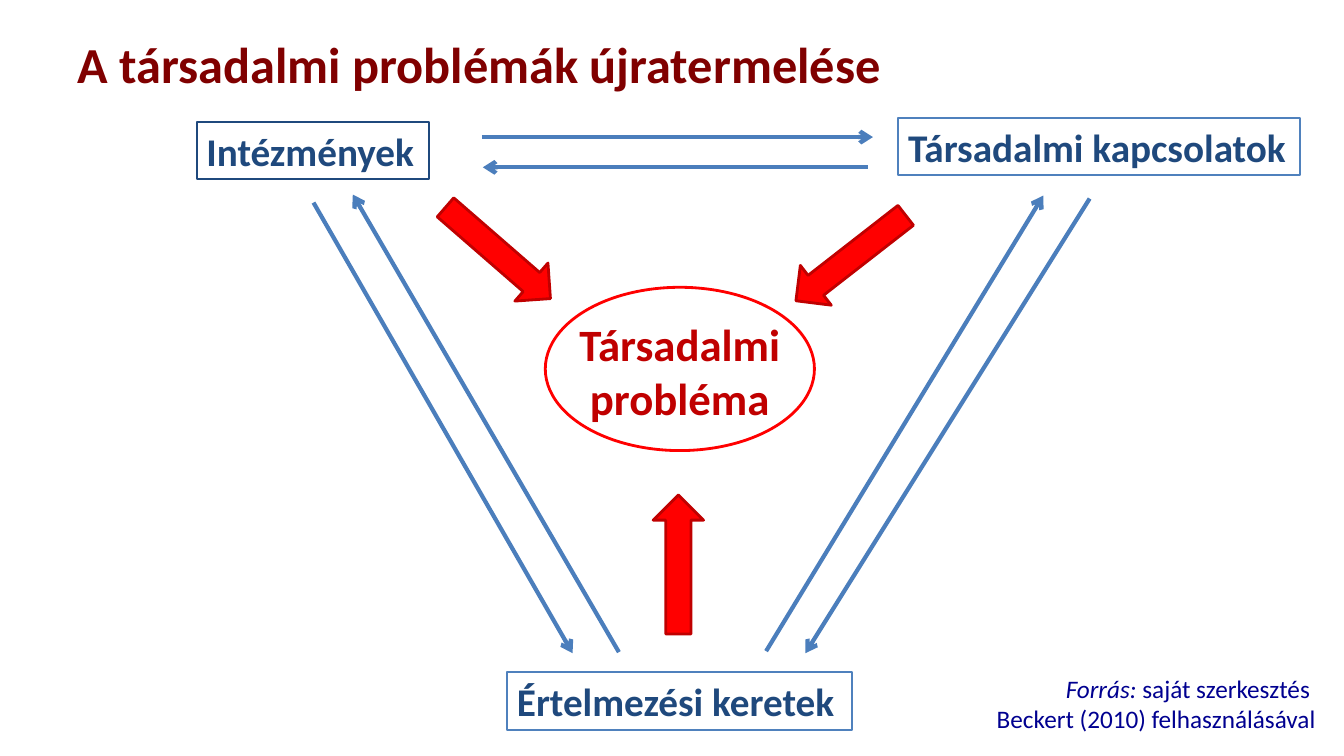
from lxml import etree
from pptx import Presentation
from pptx import util as u
from pptx.dml.color import RGBColor
from pptx.enum import shapes, text
from pptx.oxml.ns import qn

PX = 9144  # 100 px to the inch
FONT = "Calibri"
MAROON = RGBColor(0x80, 0x00, 0x00)
NAVY = RGBColor(0x1F, 0x49, 0x7D)
BLUE = RGBColor(0x4F, 0x81, 0xBD)
ARROW_BLUE = RGBColor(0x4B, 0x7E, 0xBC)
RED = RGBColor(0xFF, 0x00, 0x00)
DARK_RED = RGBColor(0xC0, 0x00, 0x00)
SOURCE_BLUE = RGBColor(0x00, 0x00, 0x90)

# Content: places are left, top, width, height
TITLE = ("A társadalmi problémák újratermelése", (67, 28, 1200, 70))
FACTORS = [
    ("Intézmények", (195, 121, 231, 57), NAVY),
    ("Társadalmi kapcsolatok", (891, 117, 399, 57), BLUE),
    ("Értelmezési keretek", (503, 667, 342, 57), BLUE),
]
PROBLEM = ("Társadalmi probléma", (541, 309, 267, 118))
PROBLEM_OVAL = (541, 285, 267, 162)
BLOCK_ARROW_SIZE = (138, 50)
BLOCK_ARROWS = [(425, 226, 41), (775, 231, 142.1), (604, 535, 270)]  # left, top, angle
LINKS = [  # start, end
    ((311, 201), (568, 648)),
    ((614, 647), (350, 193)),
    ((1081, 197), (799, 648)),
    ((760, 646), (1035, 194)),
    ((478, 136), (866, 136)),
    ((861, 166), (479, 166)),
]
SOURCE = ("Forrás: ", "saját szerkesztés ", "Beckert (2010) felhasználásával")
SOURCE_PLACE = (927, 663, 388, 71)


def px(*lengths):
    return [round(length * PX) for length in lengths]


def style(font, size, color, bold=False, italic=False):
    font.name, font.size, font.color.rgb = FONT, u.Pt(size), color
    font.bold, font.italic = bold, italic


def add_shape(kind, place, line, width, fill=None):
    shape = page.shapes.add_shape(kind, *px(*place))
    shape.shadow.inherit = False
    if fill is None:
        shape.fill.background()
    else:
        shape.fill.solid()
        shape.fill.fore_color.rgb = fill
    shape.line.color.rgb = line
    shape.line.width = u.Pt(width)
    return shape


def add_link(start, end):
    link = page.shapes.add_connector(shapes.MSO_CONNECTOR.STRAIGHT, *px(*start, *end))
    link.line.color.rgb = ARROW_BLUE
    link.line.width = u.Pt(3)
    etree.SubElement(link.line._get_or_add_ln(), qn("a:tailEnd"), type="arrow")
    etree.SubElement(link._element.spPr, qn("a:effectLst"))


deck = Presentation()
deck.slide_width, deck.slide_height = u.Inches(13.333), u.Inches(7.5)
page = deck.slides.add_slide(deck.slide_layouts[5])

# Title
title = page.shapes.title
title.left, title.top, title.width, title.height = px(*TITLE[1])
frame = title.text_frame
frame.text = TITLE[0]
frame.auto_size = text.MSO_AUTO_SIZE.NONE
frame.vertical_anchor = text.MSO_ANCHOR.MIDDLE
frame.paragraphs[0].alignment = text.PP_ALIGN.LEFT
style(frame.paragraphs[0].runs[0].font, 36, MAROON, bold=True)

# Framed factors
for label, place, line in FACTORS:
    box = add_shape(shapes.MSO_SHAPE.RECTANGLE, place, line, 1.5)
    frame = box.text_frame
    frame.text = label
    frame.word_wrap = False
    frame.vertical_anchor = text.MSO_ANCHOR.TOP
    frame.paragraphs[0].alignment = text.PP_ALIGN.LEFT
    style(frame.paragraphs[0].runs[0].font, 28, NAVY, bold=True)

# Central problem
box = page.shapes.add_textbox(*px(*PROBLEM[1]))
frame = box.text_frame
frame.text = PROBLEM[0]
frame.word_wrap = True
frame.paragraphs[0].alignment = text.PP_ALIGN.CENTER
style(frame.paragraphs[0].runs[0].font, 32, DARK_RED, bold=True)
add_shape(shapes.MSO_SHAPE.OVAL, PROBLEM_OVAL, RED, 2)

# Red arrows towards the problem
for left, top, angle in BLOCK_ARROWS:
    arrow = add_shape(shapes.MSO_SHAPE.RIGHT_ARROW, (left, top, *BLOCK_ARROW_SIZE),
                      DARK_RED, 2, RED)
    arrow.rotation = angle

# Links between the factors
for start, end in LINKS:
    add_link(start, end)

# Source note
box = page.shapes.add_textbox(*px(*SOURCE_PLACE))
box.text_frame.word_wrap = True
para = box.text_frame.paragraphs[0]
para.alignment = text.PP_ALIGN.RIGHT
lead, author, basis = SOURCE
para.text = f"{lead}\v{author}\v{basis}"
para.clear()
for part in SOURCE:
    if part == basis:
        para.add_line_break()
    span = para.add_run()
    span.text = part
    style(span.font, 18, SOURCE_BLUE, italic=part == lead)

deck.save("out.pptx")
